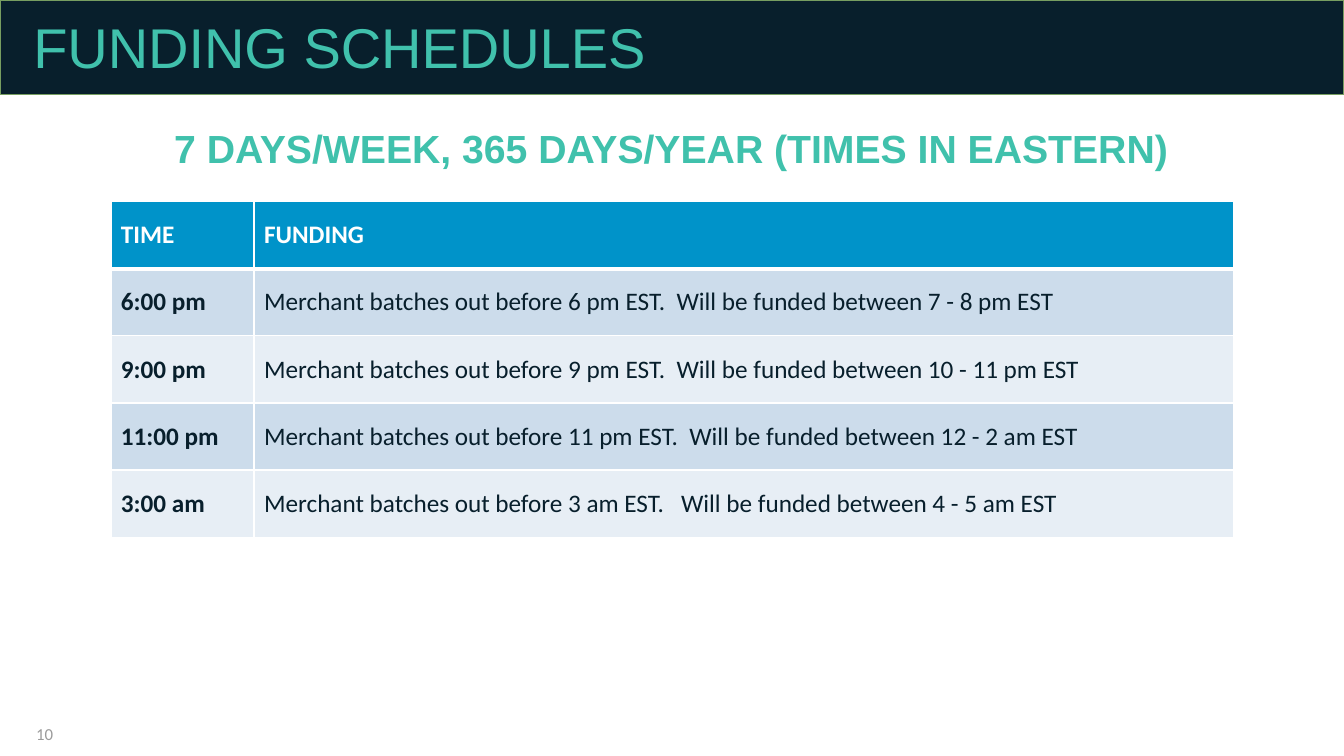
from lxml.etree import SubElement
from pptx import Presentation
from pptx.dml.color import RGBColor
from pptx.enum.shapes import MSO_SHAPE
from pptx.enum.text import MSO_ANCHOR, MSO_AUTO_SIZE, PP_ALIGN
from pptx.oxml.ns import qn
from pptx.util import Inches, Pt

NAVY = RGBColor(0x08, 0x1F, 0x2C)
OLIVE = RGBColor(0x77, 0x9E, 0x61)
TEAL = RGBColor(0x40, 0xC1, 0xAC)
GRAY = RGBColor(0x9B, 0x9B, 0x9B)
WHITE = RGBColor(0xFF, 0xFF, 0xFF)
BLUE = RGBColor(0x00, 0x93, 0xC9)
BAND_DARK = RGBColor(0xCC, 0xDC, 0xEB)
BAND_LIGHT = RGBColor(0xE7, 0xEE, 0xF5)

COLUMN_WIDTHS = (1.42, 9.72)
TABLE_HEIGHT = 3.33
SCHEDULE = (
    ("TIME", "FUNDING"),
    ("6:00 pm", "Merchant batches out before 6 pm EST.  Will be funded between 7 - 8 pm EST"),
    ("9:00 pm", "Merchant batches out before 9 pm EST.  Will be funded between 10 - 11 pm EST"),
    ("11:00 pm", "Merchant batches out before 11 pm EST.  Will be funded between 12 - 2 am EST"),
    ("3:00 am", "Merchant batches out before 3 am EST.   Will be funded between 4 - 5 am EST"),
)


def write(frame, text, *, size, color, font="Calibri", bold=False,
          align=PP_ALIGN.LEFT, anchor=MSO_ANCHOR.TOP, spacing=1.0):
    """Put one formatted paragraph into a text frame."""
    frame.word_wrap = True
    frame.vertical_anchor = anchor
    para = frame.paragraphs[0]
    para.alignment = align
    para.line_spacing = spacing
    span = para.add_run()
    span.text = text
    span.font.name = font
    span.font.size = Pt(size)
    span.font.bold = bold
    span.font.color.rgb = color


def place(shape, left, top, width, height):
    """Move and size a shape, in inches."""
    shape.left, shape.top = Inches(left), Inches(top)
    shape.width, shape.height = Inches(width), Inches(height)


def add_label(page, area, text, **style):
    """Add a text box over the given area."""
    box = page.shapes.add_textbox(*map(Inches, area))
    write(box.text_frame, text, **style)


def add_heading(page, text):
    """Fill the title placeholder and lay the dark bar behind it."""
    title = page.shapes.title
    place(title, 0.23, 0.15, 12.79, 0.78)
    title.text_frame.auto_size = MSO_AUTO_SIZE.NONE
    write(title.text_frame, text, size=40, color=TEAL, font="Arial", spacing=0.9)
    bar = page.shapes.add_shape(MSO_SHAPE.RECTANGLE, 0, 0, Inches(13.33), Inches(0.94))
    bar.shadow.inherit = False
    bar.fill.solid()
    bar.fill.fore_color.rgb = NAVY
    bar.line.color.rgb = OLIVE
    bar.line.width = Pt(1)
    title.element.addprevious(bar.element)


def set_borders(cell, **widths):
    """Draw white cell borders with widths in points, keyed by side."""
    properties = cell._tc.get_or_add_tcPr()
    for position, (side, width) in enumerate(widths.items()):
        line = properties.makeelement(qn(f"a:ln{side}"), {"w": str(Pt(width))})
        fill = SubElement(line, qn("a:solidFill"))
        SubElement(fill, qn("a:srgbClr"), val=str(WHITE))
        properties.insert(position, line)


def add_schedule(page, left, top):
    """Add the banded funding table."""
    frame = page.shapes.add_table(len(SCHEDULE), len(COLUMN_WIDTHS), Inches(left), Inches(top),
                                  Inches(sum(COLUMN_WIDTHS)), Inches(TABLE_HEIGHT))
    table = frame.table
    for column, width in zip(table.columns, COLUMN_WIDTHS):
        column.width = Inches(width)
    for row_index, texts in enumerate(SCHEDULE):
        header = row_index == 0
        band = BAND_DARK if row_index % 2 else BAND_LIGHT
        for column_index, text in enumerate(texts):
            cell = table.cell(row_index, column_index)
            cell.fill.solid()
            cell.fill.fore_color.rgb = BLUE if header else band
            cell.vertical_anchor = MSO_ANCHOR.MIDDLE
            write(cell.text_frame, text, size=18, color=WHITE if header else NAVY,
                  bold=header or column_index == 0, anchor=None)
            set_borders(cell, L=1, R=1, T=3 if row_index == 1 else 1, B=3 if header else 1)


def main():
    """Build the funding schedule slide."""
    deck = Presentation()
    deck.slide_width, deck.slide_height = Inches(13.33), Inches(7.5)
    page = deck.slides.add_slide(deck.slide_layouts[5])
    add_heading(page, "FUNDING SCHEDULES")
    add_label(page, (0.26, 7.03, 3, 0.4), "10", size=12, color=GRAY, anchor=MSO_ANCHOR.BOTTOM)
    add_label(page, (0.26, 1.24, 12.79, 0.47), "7 DAYS/WEEK, 365 DAYS/YEAR (TIMES IN EASTERN)",
              size=28, color=TEAL, font="Arial", bold=True, align=PP_ALIGN.CENTER, spacing=0.9)
    add_schedule(page, 1.1, 2)
    deck.save("out.pptx")


if __name__ == "__main__":
    main()
